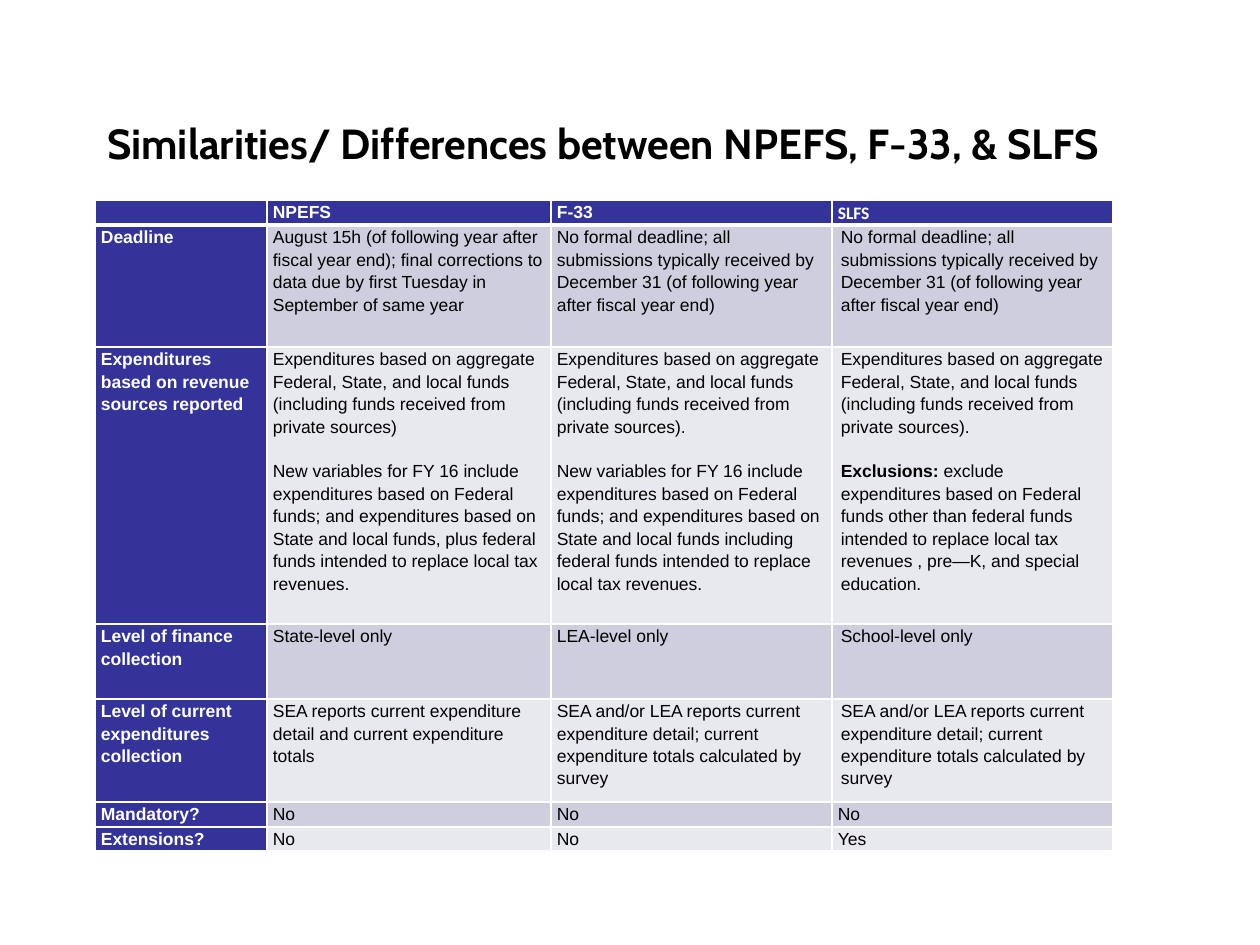
from lxml import etree
from pptx import Presentation
from pptx.dml.color import RGBColor
from pptx.enum.text import MSO_ANCHOR
from pptx.oxml.ns import qn
from pptx.util import Emu, Pt

MIDDLE = MSO_ANCHOR.MIDDLE
PX = 914400 // 126
THEME = {
    "head": "333399", "bands": ("CECEDE", "E8E8EF"),
    "light": "FFFFFF", "dark": "000000",
    "title_font": "Cabin", "body_font": "Arial", "accent_font": "Calibri",
    "title_size": 24, "body_size": 10, "line_spacing": 1.15, "gap": 12.8,
}

TITLE = "Similarities/ Differences between NPEFS, F-33, & SLFS"
NO_DEADLINE = ("No formal deadline; all submissions typically received by "
               "December 31 (of following year after fiscal year end)")
AGGREGATE = "Expenditures based on aggregate Federal, State, and local funds"
PRIVATE = "(including funds received from private sources)"
NEW_VARIABLES = ("New variables for FY 16 include expenditures based on Federal "
                 "funds; and expenditures based on State and local funds")
LEA_DETAIL = ("SEA and/or LEA reports current expenditure detail; "
              "current expenditure totals calculated by survey")
EXCLUSIONS = ("exclude expenditures based on Federal funds other than federal funds "
              "intended to replace local tax revenues , pre—K, and special education.")

ROWS = [
    ["", "NPEFS", "F-33", "SLFS"],
    ["Deadline",
     "August 15h (of following year after fiscal year end); final corrections to "
     "data due by first Tuesday in September of same year",
     NO_DEADLINE, NO_DEADLINE],
    ["Expenditures based on revenue sources reported",
     [f"{AGGREGATE} {PRIVATE}",
      f"{NEW_VARIABLES}, plus federal funds intended to replace local tax revenues."],
     [AGGREGATE, f"{PRIVATE}.",
      f"{NEW_VARIABLES} including federal funds intended to replace local tax revenues."],
     [AGGREGATE, f"{PRIVATE}.", ("Exclusions: ", EXCLUSIONS)]],
    ["Level of finance collection",
     "State-level only", "LEA-level only", "School-level only"],
    ["Level of current expenditures collection",
     "SEA reports current expenditure detail and current expenditure totals",
     LEA_DETAIL, LEA_DETAIL],
    ["Mandatory?", "No", "No", "No"],
    ["Extensions?", "No", "No", "Yes"],
]
COL_WIDTHS = [172, 284, 281, 281]
ROW_HEIGHTS = [25, 122, 277, 75, 103, 25, 22]
LEFT, TITLE_TOP, TABLE_TOP = 95, 116, 200
TITLE_WIDTH, TITLE_HEIGHT = 1081, 53
INSET, WIDE_INSET = 6, 9
WIDE_INSET_ROWS = range(1, 5)


def px(n):
    return Emu(n * PX)


def add_run(p, text, font, size, color, bold):
    r = p.add_run()
    r.text = text
    r.font.name = font
    r.font.size = Pt(size)
    r.font.bold = bold
    r.font.color.rgb = RGBColor.from_string(color)


def set_borders(cell, bottom):
    tcPr = cell._tc.get_or_add_tcPr()
    for side, width in (("L", 1), ("R", 1), ("T", 1), ("B", bottom)):
        ln = etree.SubElement(tcPr, qn(f"a:ln{side}"), w=str(Pt(width)))
        fill = etree.SubElement(ln, qn("a:solidFill"))
        etree.SubElement(fill, qn("a:srgbClr"), val=THEME["light"])


def fill_cell(cell, content, row, col):
    heading = row == 0 or col == 0
    set_borders(cell, 3 if row == 0 else 1)
    cell.fill.solid()
    fill = THEME["head"] if heading else THEME["bands"][(row - 1) % 2]
    cell.fill.fore_color.rgb = RGBColor.from_string(fill)
    wide = col == 3 and row in WIDE_INSET_ROWS
    cell.margin_left = cell.margin_right = px(WIDE_INSET if wide else INSET)
    cell.margin_top = cell.margin_bottom = 0

    font = THEME["accent_font"] if (row, col) == (0, 3) else THEME["body_font"]
    color = THEME["light"] if heading else THEME["dark"]
    size = THEME["body_size"]
    paragraphs = content if isinstance(content, list) else [content]
    tf = cell.text_frame
    for i, text in enumerate(paragraphs):
        p = tf.paragraphs[0] if i == 0 else tf.add_paragraph()
        p.line_spacing = THEME["line_spacing"]
        if 0 < i == len(paragraphs) - 1:
            p.space_before = Pt(THEME["gap"])
        if isinstance(text, tuple):
            lead, text = text
            add_run(p, lead, font, size, color, True)
        if text:
            add_run(p, text, font, size, color, heading)
        else:
            etree.SubElement(p._p, qn("a:endParaRPr"), sz=str(size * 100))


def add_title(s):
    sp = s.shapes.add_textbox(px(LEFT), px(TITLE_TOP), px(TITLE_WIDTH), px(TITLE_HEIGHT))
    tf = sp.text_frame
    tf.word_wrap = True
    tf.vertical_anchor = MIDDLE
    add_run(tf.paragraphs[0], TITLE, THEME["title_font"], THEME["title_size"],
            THEME["dark"], True)


def add_comparison(s):
    table = s.shapes.add_table(len(ROWS), len(COL_WIDTHS), px(LEFT), px(TABLE_TOP),
                               px(sum(COL_WIDTHS)), px(sum(ROW_HEIGHTS))).table
    for column, width in zip(table.columns, COL_WIDTHS):
        column.width = px(width)
    for i, (height, contents) in enumerate(zip(ROW_HEIGHTS, ROWS)):
        table.rows[i].height = px(height)
        for j, content in enumerate(contents):
            fill_cell(table.cell(i, j), content, i, j)


def main():
    prs = Presentation()
    prs.slide_width, prs.slide_height = px(1260), px(945)
    s = prs.slides.add_slide(prs.slide_layouts[6])
    add_title(s)
    add_comparison(s)
    prs.save("out.pptx")


if __name__ == "__main__":
    main()
